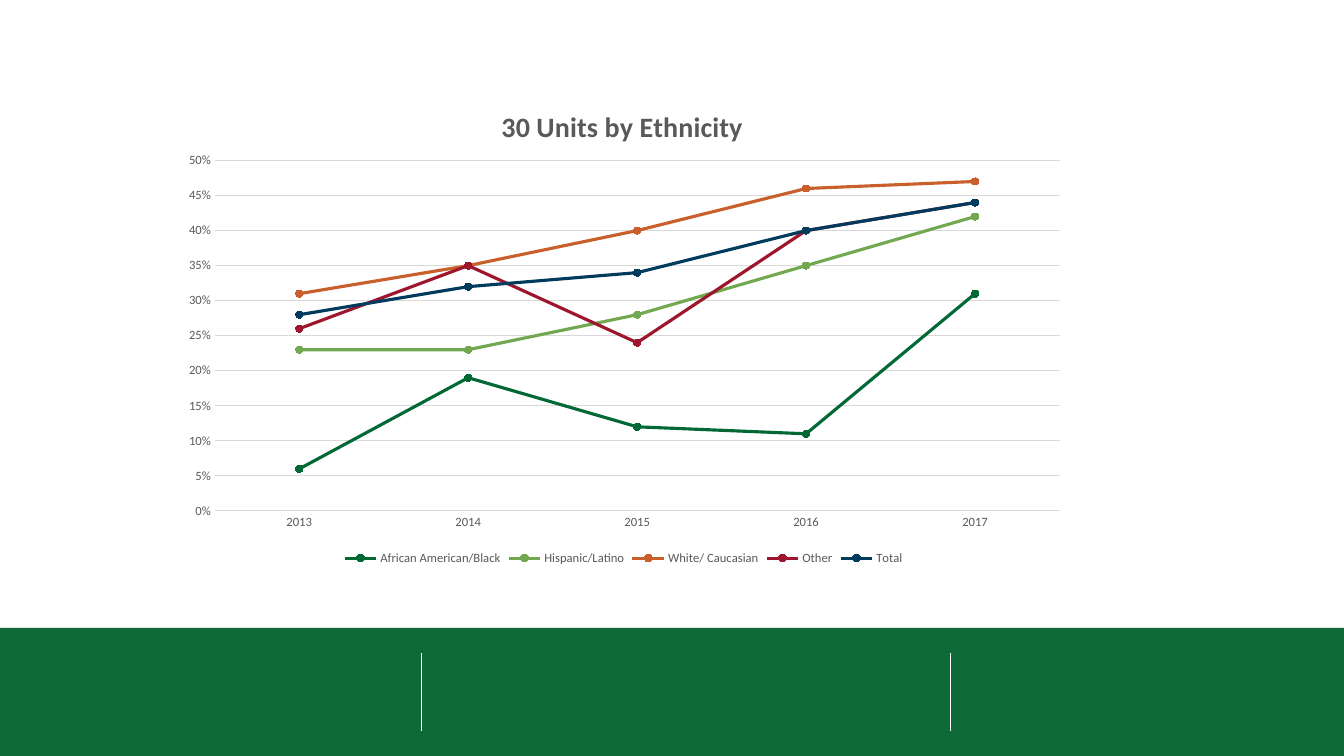
from lxml import etree
from pptx import Presentation
from pptx import util as u
from pptx.chart.data import CategoryChartData
from pptx.dml.color import RGBColor
from pptx.enum import chart as charts, dml, shapes
from pptx.oxml import parse_xml
from pptx.oxml.ns import nsdecls, qn

WIDTH, HEIGHT = 13.33, 7.5
FONT = "Calibri"
GREY, GRID, WHITE, BAND = "595959", "D9D9D9", "FFFFFF", "0E6A37"
TITLE = "30 Units by Ethnicity"
YEARS = ["2013", "2014", "2015", "2016", "2017"]
SERIES = [
    ("African American/Black", "016836", (0.06, 0.19, 0.12, 0.11, 0.31)),
    ("Hispanic/Latino", "72A84F", (0.23, 0.23, 0.28, 0.35, 0.42)),
    ("White/ Caucasian", "C9602C", (0.31, 0.35, 0.40, 0.46, 0.47)),
    ("Other", "9D162E", (0.26, 0.35, 0.24, 0.40, 0.44)),
    ("Total", "003A5C", (0.28, 0.32, 0.34, 0.40, 0.44)),
]
CHART_BOX = (1.68, 0.82, 9.01, 4.83)
PLOT_LAYOUT = {"x": 0.05, "y": 0.16, "w": 0.93, "h": 0.72}
TITLE_LAYOUT = {"x": 0.36, "y": 0.04}
BAND_TOP = 6.23
DIVIDERS = (4.18, 9.43)
DIVIDER_INSET = 0.25


def color(value):
    return RGBColor.from_string(value)


def style_font(font, size, value=GREY, bold=False):
    font.name, font.size, font.bold = FONT, u.Pt(size), bold
    font.color.rgb = color(value)


def style_line(line, value, width):
    line.color.rgb = color(value)
    line.width = u.Pt(width)


def manual_layout(places, inner=False):
    target = '<c:layoutTarget val="inner"/>' if inner else ""
    modes = "".join(f'<c:{key}Mode val="edge"/>' for key in "xy")
    values = "".join(f'<c:{key} val="{value}"/>' for key, value in places.items())
    return parse_xml(
        f'<c:layout {nsdecls("c")}><c:manualLayout>{target}{modes}{values}'
        "</c:manualLayout></c:layout>"
    )


def place(element, layout, index):
    for old in element.findall(qn("c:layout")):
        element.remove(old)
    element.insert(index, layout)


def add_footer(slide):
    band = slide.shapes.add_shape(
        shapes.MSO_SHAPE.RECTANGLE, 0, u.Inches(BAND_TOP),
        u.Inches(WIDTH), u.Inches(HEIGHT - BAND_TOP),
    )
    band.shadow.inherit = False
    band.fill.solid()
    band.fill.fore_color.rgb = color(BAND)
    band.line.fill.background()
    for x in DIVIDERS:
        divider = slide.shapes.add_connector(
            shapes.MSO_CONNECTOR.STRAIGHT,
            u.Inches(x), u.Inches(BAND_TOP + DIVIDER_INSET),
            u.Inches(x), u.Inches(HEIGHT - DIVIDER_INSET),
        )
        style_line(divider.line, WHITE, 0.75)
        etree.SubElement(divider._element.spPr, qn("a:effectLst"))


def add_line_chart(slide):
    data = CategoryChartData(number_format="0%")
    data.categories = YEARS
    for name, _, values in SERIES:
        data.add_series(name, values)
    chart = slide.shapes.add_chart(
        charts.XL_CHART_TYPE.LINE_MARKERS, *map(u.Inches, CHART_BOX), data
    ).chart
    style_font(chart.font, 10, "000000")

    chart.has_title = True
    chart.chart_title.include_in_layout = False
    paragraph = chart.chart_title.text_frame.paragraphs[0]
    paragraph.text = TITLE
    style_font(paragraph.font, 20, bold=True)
    place(chart.chart_title._element, manual_layout(TITLE_LAYOUT), 1)
    plot_area = chart._chartSpace.chart.plotArea
    place(plot_area, manual_layout(PLOT_LAYOUT, inner=True), 0)

    chart.has_legend = True
    chart.legend.position = charts.XL_LEGEND_POSITION.BOTTOM
    chart.legend.include_in_layout = False
    style_font(chart.legend.font, 9)

    for axis in (chart.category_axis, chart.value_axis):
        axis.major_tick_mark = axis.minor_tick_mark = charts.XL_TICK_MARK.NONE
        style_font(axis.tick_labels.font, 9)
    style_line(chart.category_axis.format.line, GRID, 0.75)
    value_axis = chart.value_axis
    value_axis.minimum_scale, value_axis.maximum_scale = 0, 0.5
    value_axis.major_unit = 0.05
    value_axis.tick_labels.number_format = "0%"
    value_axis.tick_labels.number_format_is_linked = False
    value_axis.format.line.fill.background()
    style_line(value_axis.major_gridlines.format.line, GRID, 0.75)

    chart.plots[0].vary_by_categories = False
    for series, (_, value, _) in zip(chart.plots[0].series, SERIES):
        series.smooth = False
        style_line(series.format.line, value, 2.25)
        marker = series.marker
        marker.style, marker.size = charts.XL_MARKER_STYLE.CIRCLE, 5
        marker.format.fill.solid()
        marker.format.fill.fore_color.rgb = color(value)
        style_line(marker.format.line, value, 0.75)
        marker.format.line.dash_style = dml.MSO_LINE.SOLID


def main():
    presentation = Presentation()
    presentation.slide_width = u.Inches(WIDTH)
    presentation.slide_height = u.Inches(HEIGHT)
    slide = presentation.slides.add_slide(presentation.slide_layouts[6])
    add_footer(slide)
    add_line_chart(slide)
    presentation.save("out.pptx")


if __name__ == "__main__":
    main()
